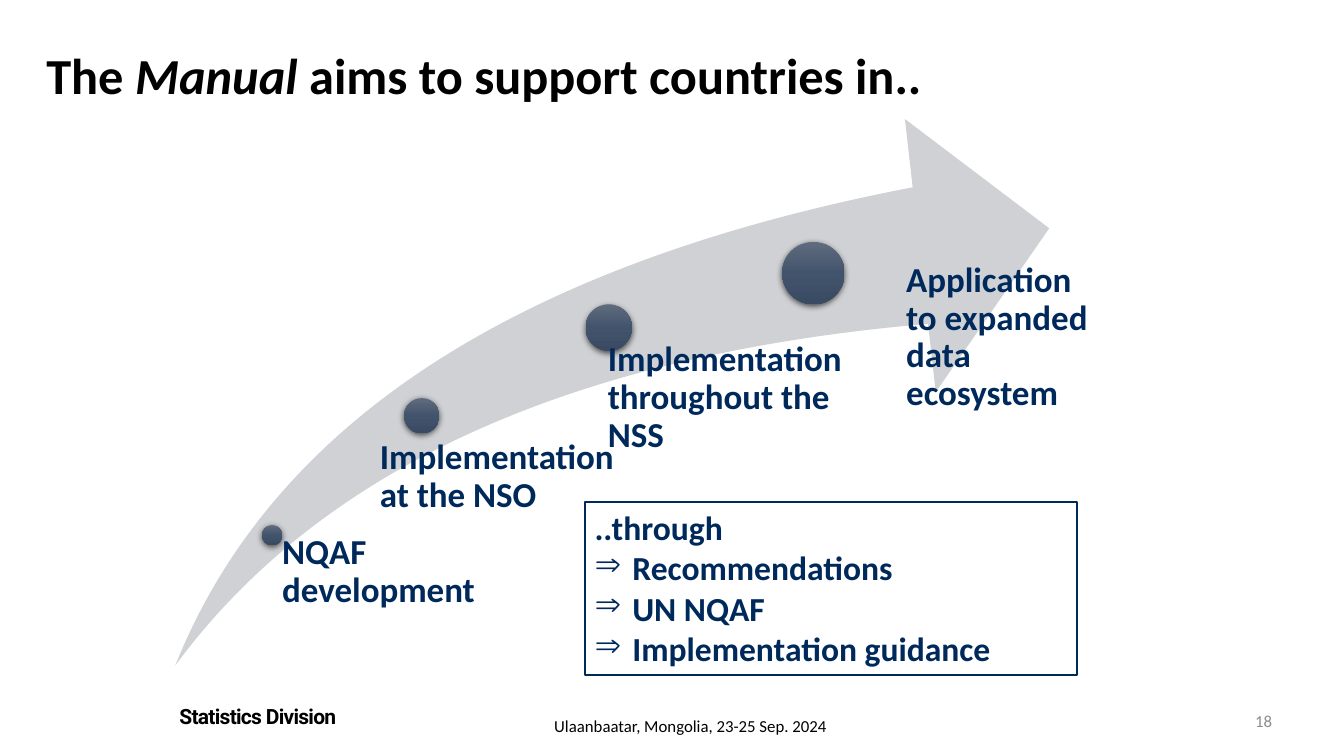
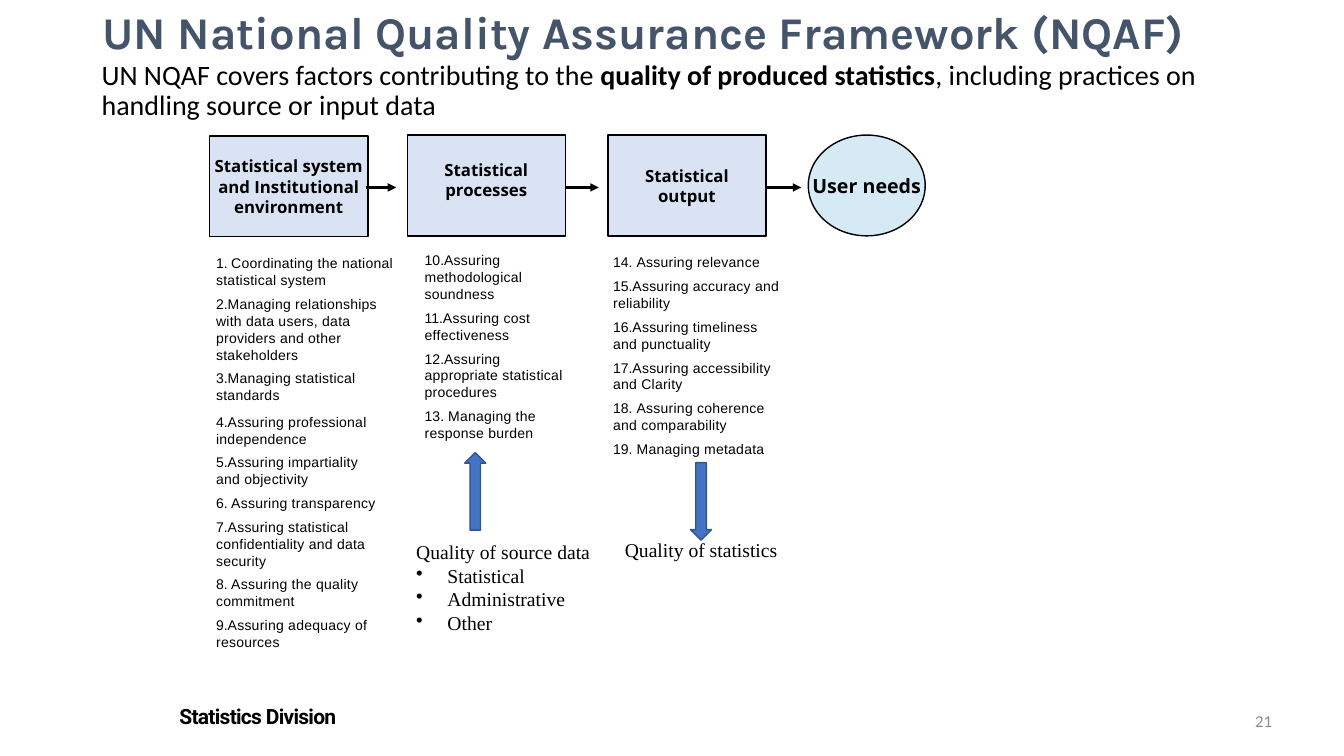
from dataclasses import dataclass
from typing import Optional

from lxml import etree
from copy import deepcopy
from pptx import Presentation
from pptx.dml.color import RGBColor
from pptx.enum.shapes import MSO_CONNECTOR, MSO_SHAPE
from pptx.enum.text import MSO_ANCHOR, PP_ALIGN
from pptx.oxml.ns import qn
from pptx.util import Pt

LEFT, CENTER, RIGHT = PP_ALIGN.LEFT, PP_ALIGN.CENTER, PP_ALIGN.RIGHT
TOP, MIDDLE = MSO_ANCHOR.TOP, MSO_ANCHOR.MIDDLE
RECTANGLE, OVAL, SWOOSH = MSO_SHAPE.RECTANGLE, MSO_SHAPE.OVAL, MSO_SHAPE.SWOOSH_ARROW
UP_ARROW, DOWN_ARROW = MSO_SHAPE.UP_ARROW, MSO_SHAPE.DOWN_ARROW
STRAIGHT = MSO_CONNECTOR.STRAIGHT


@dataclass(frozen=True)
class TextStyle:
    font: str
    size: float
    color: str = "000000"
    bold: bool = False
    tracking: float = 0
    line_spacing: Optional[float] = None


@dataclass(frozen=True)
class Theme:
    black: str = "000000"
    swoosh: str = "CFD1D4"
    navy: str = "00295B"
    stage_fill: str = "DAE3F3"
    user_fill: str = "D6EAF6"
    block_arrow: str = "4472C4"
    block_arrow_line: str = "325491"
    dot_stops: tuple[tuple[float, str], ...] = ((0, "606B7D"), (0.5, "42546C"), (1, "394A62"))
    title: TextStyle = TextStyle("Calibri", 36, bold=True, line_spacing=0.9)
    framework_title: TextStyle = TextStyle("Karla", 32.4, "44546A", True, line_spacing=0.9)
    lead: TextStyle = TextStyle("Calibri", 20, line_spacing=0.9)
    milestone: TextStyle = TextStyle("Calibri", 25, "00295B", True, line_spacing=0.9)
    means: TextStyle = TextStyle("Calibri", 24, "00295B", True)
    stage: TextStyle = TextStyle("Open Sans", 12, bold=True)
    user: TextStyle = TextStyle("Open Sans", 14, bold=True)
    principle: TextStyle = TextStyle("Arial", 10, tracking=0.2)
    quality: TextStyle = TextStyle("Times New Roman", 14)
    division: TextStyle = TextStyle("Roboto", 15, bold=True, tracking=-0.5)
    date: TextStyle = TextStyle("Calibri", 12)
    number: TextStyle = TextStyle("Calibri", 12, "8C8C8C")


THEME = Theme()


@dataclass(frozen=True)
class Frame:
    left: float
    top: float
    width: float
    height: float

    def lengths(self) -> tuple[Pt, Pt, Pt, Pt]:
        return Pt(self.left), Pt(self.top), Pt(self.width), Pt(self.height)


@dataclass(frozen=True)
class Span:
    text: str
    bold: Optional[bool] = None
    italic: Optional[bool] = None


@dataclass(frozen=True)
class Para:
    spans: tuple[Span, ...]
    bullet: str = ""
    number: int = 0
    margin: float = 0
    indent: float = 0
    before: float = 0


@dataclass(frozen=True)
class Milestone:
    text: str
    dot: Frame
    label: Frame


@dataclass(frozen=True)
class Stage:
    text: str
    frame: Frame
    arrow_start: float
    arrow_end: float
    lift: float = 0


@dataclass(frozen=True)
class Principle:
    """One numbered entry; a continuation makes the number hang, with the rest at the margin."""
    text: str
    continuation: str = ""
    hanging: bool = False
    before: float = 5


@dataclass(frozen=True)
class PrincipleColumn:
    frame: Frame
    first_number: int
    hang: float
    principles: tuple[Principle, ...]


MILESTONES = (
    Milestone("NQAF development", Frame(187.2, 375.1, 14.4, 14.4), Frame(201.6, 381.6, 154, 93)),
    Milestone("Implementation at the NSO", Frame(288.7, 284.4, 25.2, 25.2),
              Frame(271.4, 313.9, 181.4, 77)),
    Milestone("Implementation throughout the NSS", Frame(418.3, 217.4, 33.1, 33.1),
              Frame(434.2, 244.1, 187.2, 110)),
    Milestone("Application to expanded data ecosystem", Frame(558.7, 172.8, 44.6, 44.6),
              Frame(647.3, 187.2, 136.1, 134.6)),
)
STAGES = (
    Stage("Statistical system\nand Institutional\nenvironment", Frame(149.8, 97.2, 113, 72),
          261.4, 283),
    Stage("Statistical\nprocesses", Frame(290.9, 96.5, 113, 72), 403.9, 427.7, 7.6),
    Stage("Statistical\noutput", Frame(434.2, 96.5, 113, 72), 547.2, 572.4),
)
COLUMNS = (
    PrincipleColumn(Frame(153.4, 182.1, 131.8, 283), 1, 10.8, (
        Principle("Coordinating the national", "statistical system", True),
        Principle("Managing relationships with data users, data providers and other stakeholders"),
        Principle("Managing statistical standards"),
        Principle("Assuring professional independence", before=7),
        Principle("Assuring impartiality\vand objectivity"),
        Principle("Assuring transparency", hanging=True),
        Principle("Assuring statistical confidentiality and data security"),
        Principle("Assuring the quality", "commitment", True),
        Principle("Assuring adequacy of resources"),
    )),
    PrincipleColumn(Frame(302.4, 180, 103, 136), 10, 16.8, (
        Principle("Assuring\vmethodological soundness"),
        Principle("Assuring cost effectiveness"),
        Principle("Assuring\vappropriate statistical procedures"),
        Principle("Managing the", "response burden", True),
    )),
    PrincipleColumn(Frame(437, 181.4, 122.4, 146), 14, 16.8, (
        Principle("Assuring relevance", hanging=True),
        Principle("Assuring accuracy and reliability"),
        Principle("Assuring timeliness\vand punctuality"),
        Principle("Assuring accessibility\vand Clarity"),
        Principle("Assuring coherence", "and comparability", True),
        Principle("Managing metadata", hanging=True),
    )),
)


def plain(text: str) -> list[Para]:
    """One paragraph for each line of text."""
    return [Para((Span(line),)) for line in text.split("\n")]


def bulleted(heading: str, items: tuple[str, ...], bullet: str, hang: float) -> list[Para]:
    return plain(heading) + [
        Para((Span(item),), bullet=bullet, margin=hang, indent=-hang) for item in items]


def write(shape, paras: list[Para], style: TextStyle, align=LEFT, anchor=TOP,
          inset: tuple[float, float] = (7.2, 3.6), wrap: bool = True) -> None:
    """Fill a shape with text; inset is (sides, top and bottom)."""
    frame = shape.text_frame
    frame.word_wrap = wrap
    frame.vertical_anchor = anchor
    frame.margin_left = frame.margin_right = Pt(inset[0])
    frame.margin_top = frame.margin_bottom = Pt(inset[1])
    for index, para in enumerate(paras):
        paragraph = frame.add_paragraph() if index else frame.paragraphs[0]
        properties = paragraph._p.get_or_add_pPr()
        properties.set("marL", str(Pt(para.margin)))
        properties.set("indent", str(Pt(para.indent)))
        if para.bullet:
            etree.SubElement(properties, qn("a:buChar"), char=para.bullet)
        elif para.number:
            etree.SubElement(properties, qn("a:buAutoNum"), type="arabicPeriod",
                             startAt=str(para.number))
        font = paragraph.font
        font.name, font.size, font.bold = style.font, Pt(style.size), style.bold
        font.color.rgb = RGBColor.from_string(style.color)
        if style.tracking:
            properties.find(qn("a:defRPr")).set("spc", str(round(style.tracking * 100)))
        paragraph.alignment = align
        if style.line_spacing:
            paragraph.line_spacing = style.line_spacing
        if index and para.before:
            paragraph.space_before = Pt(para.before)
        for span in para.spans:
            if span.bold is None and span.italic is None:
                paragraph.text += span.text
                continue
            run = paragraph.add_run()
            run.text, run.font.bold, run.font.italic = span.text, span.bold, span.italic


def add_text(page, frame: Frame, paras: list[Para], style: TextStyle, **layout):
    box = page.shapes.add_textbox(*frame.lengths())
    write(box, paras, style, **layout)
    return box


def add_figure(page, kind, frame: Frame, fill: str = "", line: str = "", weight: float = 1):
    shape = page.shapes.add_shape(kind, *frame.lengths())
    shape.shadow.inherit = False
    if fill:
        shape.fill.solid()
        shape.fill.fore_color.rgb = RGBColor.from_string(fill)
    else:
        shape.fill.background()
    if line:
        shape.line.color.rgb = RGBColor.from_string(line)
        shape.line.width = Pt(weight)
    else:
        shape.line.fill.background()
    return shape


def add_dot(page, frame: Frame) -> None:
    """A shaded ball with a soft shadow."""
    dot = add_figure(page, OVAL, frame)
    dot.fill.gradient()
    dot.fill.gradient_angle = 270
    shape_properties = dot._element.spPr
    first_stop = shape_properties.find(".//" + qn("a:gs"))
    first_stop.addnext(deepcopy(first_stop))
    for stop, (position, color) in zip(dot.fill.gradient_stops, THEME.dot_stops):
        stop.position = position
        stop.color.rgb = RGBColor.from_string(color)
    effects = shape_properties.find(qn("a:effectLst"))
    shadow = etree.SubElement(effects, qn("a:outerShdw"), blurRad=str(Pt(4.5)),
                              dist=str(Pt(1.5)), dir="5400000", rotWithShape="0")
    color = etree.SubElement(shadow, qn("a:srgbClr"), val=THEME.black)
    etree.SubElement(color, qn("a:alpha"), val="63000")


def add_arrow(page, start: float, end: float, level: float) -> None:
    arrow = page.shapes.add_connector(STRAIGHT, Pt(start), Pt(level), Pt(end), Pt(level))
    arrow.line.color.rgb = RGBColor.from_string(THEME.black)
    arrow.line.width = Pt(2)
    etree.SubElement(arrow.line._get_or_add_ln(), qn("a:tailEnd"), type="triangle")
    etree.SubElement(arrow._element.spPr, qn("a:effectLst"))


def add_page(deck, number: int):
    """A blank page with the division name and the page number."""
    page = deck.slides.add_slide(deck.slide_layouts[6])
    add_text(page, Frame(121, 499, 420, 25.2), plain("Statistics Division"), THEME.division)
    add_text(page, Frame(822.2, 500.4, 93.6, 28.8), plain(str(number)), THEME.number,
             align=RIGHT, anchor=MIDDLE)
    return page


def numbered(column: PrincipleColumn) -> list[Para]:
    paras = []
    for number, item in enumerate(column.principles, column.first_number):
        hang = column.hang if item.hanging else 0
        paras.append(Para((Span(item.text),), number=number, margin=1 + hang, indent=-hang,
                          before=item.before))
        if item.continuation:
            paras.append(Para((Span(item.continuation),), margin=1))
    return paras


def build_aims(deck) -> None:
    page = add_page(deck, 18)
    title = Para((Span("The "), Span("Manual", italic=True),
                  Span(" aims to support countries in..", italic=False)))
    add_text(page, Frame(26, 3.6, 828, 104.4), [title], THEME.title, anchor=MIDDLE)
    swoosh = add_figure(page, SWOOSH, Frame(125.3, 85, 624.2, 390.2), THEME.swoosh)
    swoosh.adjustments[0] = swoosh.adjustments[1] = 0.25
    for milestone in MILESTONES:
        add_dot(page, milestone.dot)
        add_text(page, milestone.label, plain(milestone.text), THEME.milestone, inset=(0, 0))
    means = add_figure(page, RECTANGLE, Frame(417.6, 358.6, 352, 123.8), line=THEME.navy, weight=1.5)
    write(means, bulleted("..through", ("Recommendations", "UN NQAF", "Implementation guidance"),
                          "⇒", 27), THEME.means)
    add_text(page, Frame(388.8, 507.6, 214, 22.3),
             plain("Ulaanbaatar, Mongolia, 23-25 Sep. 2024"), THEME.date)


def build_framework(deck) -> None:
    page = add_page(deck, 21)
    lead = Para((Span("UN NQAF covers factors contributing to the "),
                 Span("quality of produced statistics", bold=True),
                 Span(", including practices on handling source or input data", bold=False)))
    add_text(page, Frame(65.5, 40.3, 828, 70.6), [lead], THEME.lead)
    add_text(page, Frame(66.2, 2.2, 828, 44.6),
             plain("UN National Quality Assurance Framework (NQAF)"), THEME.framework_title,
             anchor=MIDDLE)
    for stage in STAGES:
        box = add_figure(page, RECTANGLE, stage.frame, THEME.stage_fill, THEME.black)
        write(box, plain(stage.text), THEME.stage, align=CENTER, anchor=MIDDLE, wrap=False)
        box.text_frame.margin_bottom = Pt(3.6 + stage.lift)
    for stage in STAGES:
        add_arrow(page, stage.arrow_start, stage.arrow_end, 133.9)
    user = add_figure(page, OVAL, Frame(577.4, 96.5, 83.5, 72), THEME.user_fill, THEME.black)
    write(user, plain("User needs"), THEME.user, align=CENTER, anchor=MIDDLE, wrap=False)
    for column in COLUMNS:
        add_text(page, column.frame, numbered(column), THEME.principle, inset=(0, 0))
    for kind, left, top in ((UP_ARROW, 331.9, 323.3), (DOWN_ARROW, 493.2, 330.5)):
        add_figure(page, kind, Frame(left, top, 15.1, 55.4), THEME.block_arrow,
                   THEME.block_arrow_line)
    add_text(page, Frame(439.2, 380.9, 149.8, 24.5), plain("Quality of statistics"), THEME.quality)
    add_text(page, Frame(290.2, 382.3, 176.4, 74.9),
             bulleted("Quality of source data", ("Statistical", "Administrative", "Other"),
                      "•", 22.3), THEME.quality)


def main() -> None:
    deck = Presentation()
    deck.slide_width, deck.slide_height = Pt(960), Pt(540)
    build_aims(deck)
    build_framework(deck)
    deck.save("out.pptx")


if __name__ == "__main__":
    main()
